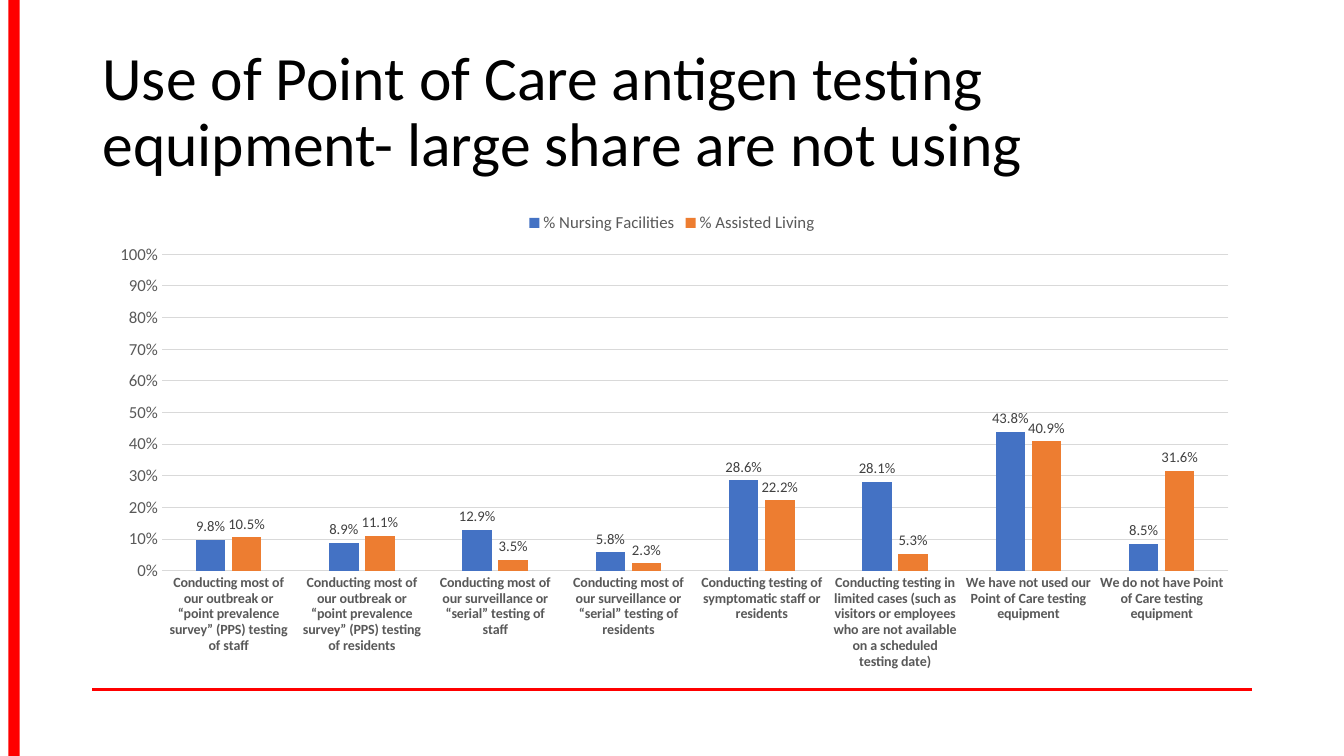
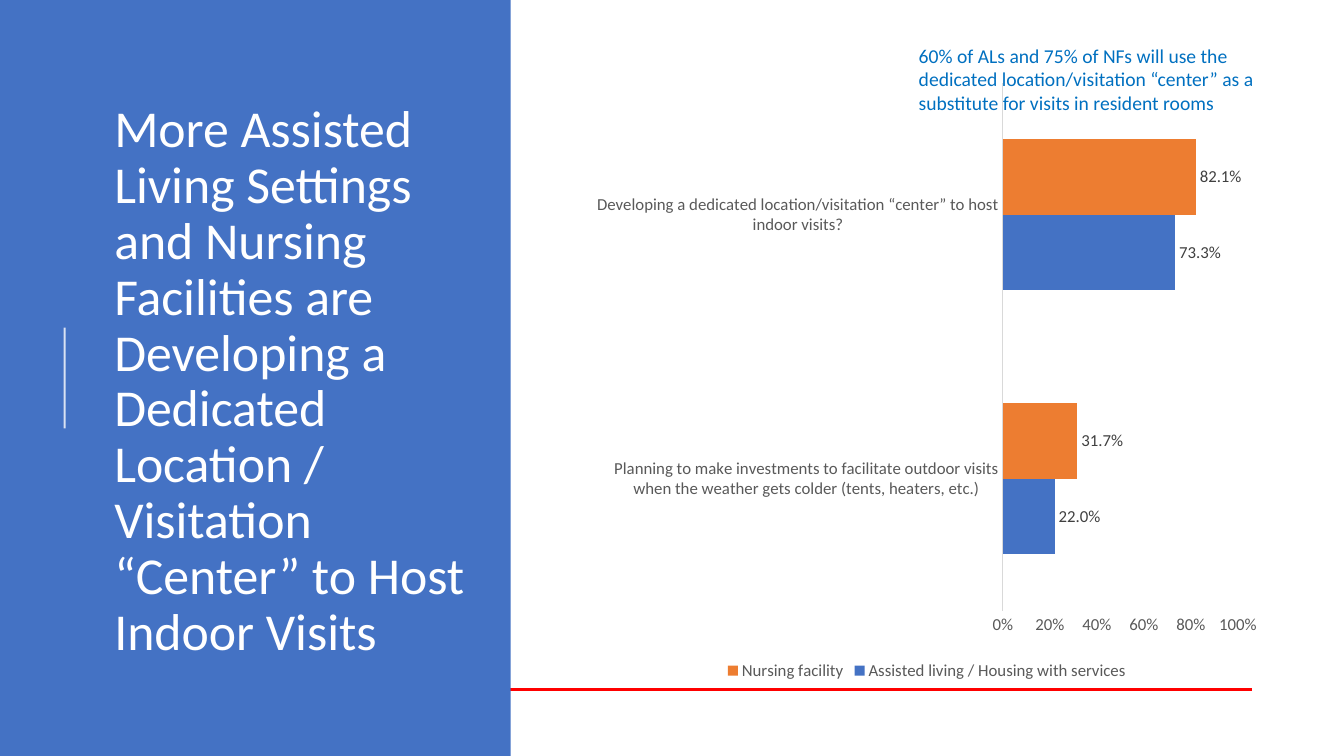
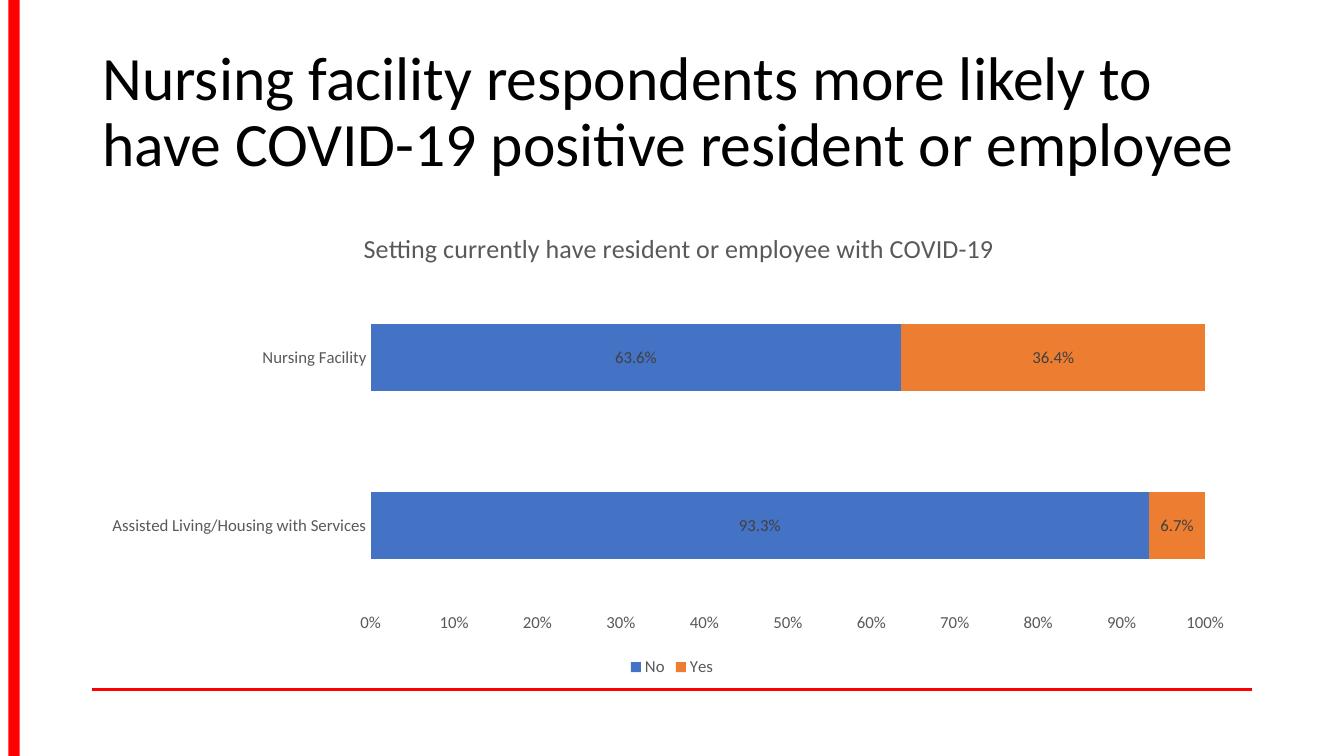
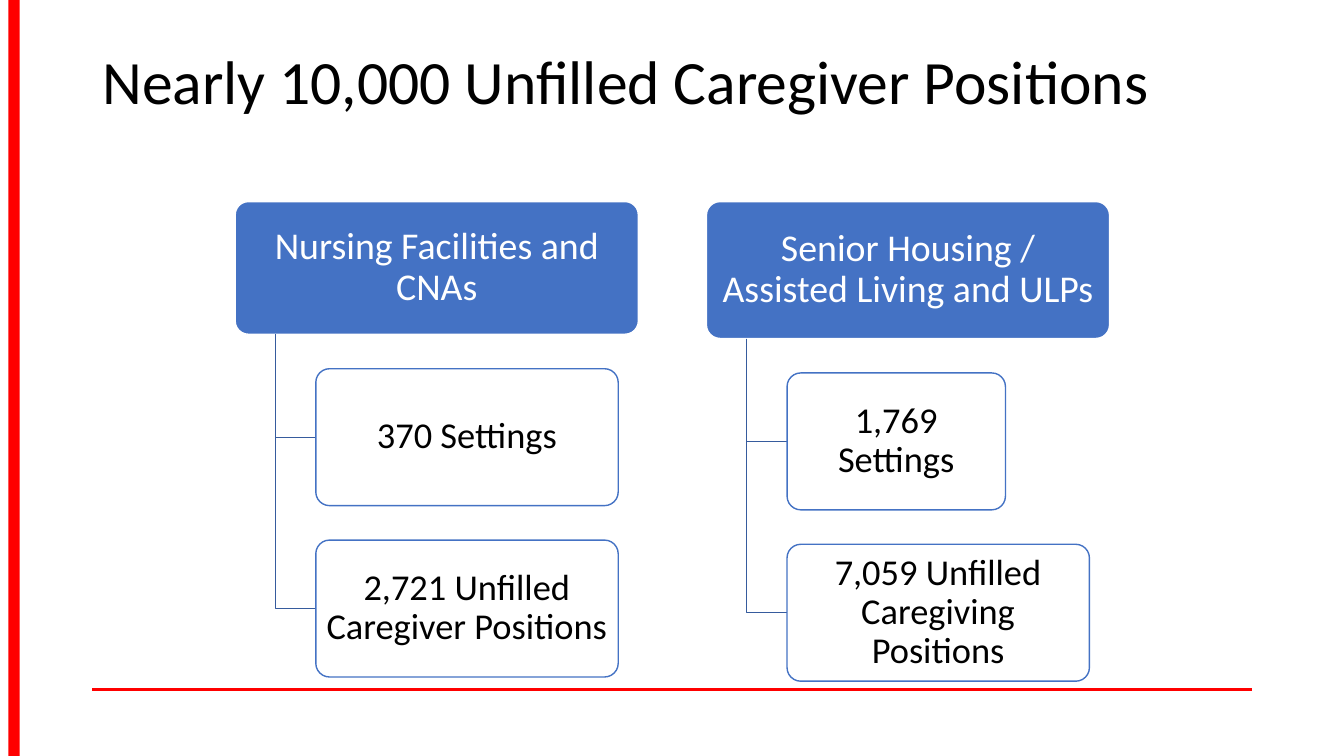
from dataclasses import dataclass
from typing import Optional

from lxml.etree import SubElement
from pptx import Presentation
from pptx.chart.data import CategoryChartData
from pptx.dml.color import RGBColor
from pptx.enum.chart import XL_CHART_TYPE as ChartKind
from pptx.enum.chart import XL_LABEL_POSITION as LabelSpot
from pptx.enum.chart import XL_LEGEND_POSITION as LegendSpot
from pptx.enum.chart import XL_TICK_MARK as TickMark
from pptx.enum.shapes import MSO_CONNECTOR as Connector
from pptx.enum.shapes import MSO_SHAPE as Preset
from pptx.enum.text import MSO_ANCHOR as Anchor
from pptx.enum.text import MSO_AUTO_SIZE as AutoSize
from pptx.enum.text import PP_ALIGN as Align
from pptx.oxml import parse_xml
from pptx.oxml.ns import nsdecls, qn
from pptx.util import Emu, Inches, Pt

COLUMNS, ROWS = 160, 90
CELL = Inches(1) / 12
FONT = "Calibri"
RED, BLUE, ORANGE, WHITE, BLACK = "FF0000", "4472C4", "ED7D31", "FFFFFF", "000000"
GREY, DARK_GREY, PALE_GREY = "595959", "404040", "D9D9D9"
NOTE_BLUE, BRANCH_BLUE = "0070C0", "365B9D"


@dataclass(frozen=True)
class Area:
    left: float
    top: float
    width: float
    height: float

    def lengths(self) -> tuple:
        return tuple(cells(n) for n in (self.left, self.top, self.width, self.height))


@dataclass(frozen=True)
class ChartPlan:
    kind: ChartKind
    area: Area
    plot: Area
    categories: list
    series: list
    legend: LegendSpot
    axis_step: float
    gap: int = 150
    overlap: int = 0
    category_size: float = 12
    category_bold: bool = False
    category_line: Optional[str] = PALE_GREY
    grid: bool = False
    label_size: float = 12
    label_spot: LabelSpot = LabelSpot.OUTSIDE_END
    title: str = ""


@dataclass(frozen=True)
class Child:
    text: str
    width: float = 36


@dataclass(frozen=True)
class Tree:
    left: float
    head: str
    head_height: float
    children: tuple


TITLE = Area(11, 4.8, 138, 17.4)
CHART = Area(11, 24, 138, 57.1)
TREE_TOP, HEAD_WIDTH, INDENT, GAP, CHILD_HEIGHT = 24, 48, 4.8, 4.1, 16.3

TESTING = ChartPlan(
    kind=ChartKind.COLUMN_CLUSTERED, area=CHART, plot=Area(0.06, 0.11, 0.92, 0.66),
    categories=[
        "Conducting most of our outbreak or “point prevalence survey” (PPS) testing of staff",
        "Conducting most of our outbreak or “point prevalence survey” (PPS) testing of residents",
        "Conducting most of our surveillance or “serial” testing of staff",
        "Conducting most of our surveillance or “serial” testing of residents",
        "Conducting testing of symptomatic staff or residents",
        "Conducting testing in limited cases (such as visitors or employees who are not available"
        " on a scheduled testing date)",
        "We have not used our Point of Care testing equipment",
        "We do not have Point of Care testing equipment",
    ],
    series=[
        ("% Nursing Facilities", (0.098, 0.089, 0.129, 0.058, 0.286, 0.281, 0.438, 0.085)),
        ("% Assisted Living", (0.105, 0.111, 0.035, 0.023, 0.222, 0.053, 0.409, 0.316)),
    ],
    legend=LegendSpot.TOP, axis_step=0.1, gap=229, overlap=-22, category_size=10,
    category_bold=True, grid=True, label_size=10.5,
)
VISITS = ChartPlan(
    kind=ChartKind.BAR_CLUSTERED, area=Area(69.2, 8.4, 82.3, 73.1),
    plot=Area(0.61, 0.02, 0.34, 0.86),
    categories=[
        "Planning to make investments to facilitate outdoor visits when the weather gets colder"
        " (tents, heaters, etc.)",
        "Developing a dedicated location/visitation “center” to host indoor visits?",
    ],
    series=[
        ("Assisted living / Housing with services", (0.22, 0.733)),
        ("Nursing facility", (0.317, 0.821)),
    ],
    legend=LegendSpot.BOTTOM, axis_step=0.2,
)
POSITIVE = ChartPlan(
    kind=ChartKind.BAR_STACKED_100, area=CHART, plot=Area(0.24, 0.15, 0.72, 0.7),
    categories=["Assisted Living/Housing with Services", "Nursing Facility"],
    series=[("No", (0.933, 0.636)), ("Yes", (0.067, 0.364))],
    legend=LegendSpot.BOTTOM, axis_step=0.1, overlap=100, category_line=None,
    label_spot=LabelSpot.CENTER,
    title="Setting currently have resident or employee with COVID-19",
)
TREES = (
    Tree(28, "Nursing Facilities and CNAs", 15.8,
         (Child("370 Settings"), Child("2,721 Unfilled Caregiver Positions"))),
    Tree(84.1, "Senior Housing / Assisted Living and ULPs", 16.3,
         (Child("1,769 Settings", 26), Child("7,059 Unfilled Caregiving Positions"))),
)


def cells(count: float) -> Emu:
    return Emu(round(count * CELL))


def rgb(color: str) -> RGBColor:
    return RGBColor.from_string(color)


def style_font(font, size: float, color: str, bold: bool = False) -> None:
    font.name = FONT
    font.size = Pt(size)
    font.bold = bold
    font.color.rgb = rgb(color)


def write(frame, text: str, *, size: float, color: str, align=None, spacing=None,
          anchor=None, insets=None) -> None:
    if anchor is not None:
        frame.vertical_anchor = anchor
    if insets is not None:
        frame.margin_left = frame.margin_right = Inches(insets[0])
        frame.margin_top = frame.margin_bottom = Inches(insets[1])
    para = frame.paragraphs[0]
    para.alignment = align
    para.line_spacing = spacing
    span = para.add_run()
    span.text = text
    style_font(span.font, size, color)


def fade(shape, percent: int) -> None:
    color = next(shape.element.iter(qn("a:srgbClr")))
    SubElement(color, qn("a:alpha")).set("val", str(percent * 1000))


def set_line(line, color: Optional[str], width: float = 0.75) -> None:
    if color is None:
        line.fill.background()
    else:
        line.color.rgb = rgb(color)
        line.width = Pt(width)


def add_block(page, preset, area: Area, fill: str, line: Optional[str] = None):
    block = page.shapes.add_shape(preset, *area.lengths())
    block.shadow.inherit = False
    block.fill.solid()
    block.fill.fore_color.rgb = rgb(fill)
    set_line(block.line, line, 1)
    return block


def add_rule(page, start: tuple, end: tuple, color: str, width: float):
    rule = page.shapes.add_connector(
        Connector.STRAIGHT, *(cells(n) for n in (*start, *end)))
    set_line(rule.line, color, width)
    SubElement(rule.element.spPr, qn("a:effectLst"))
    return rule


def add_title(page, text: str, *, area: Area = TITLE, size: float = 44,
              color: str = BLACK) -> None:
    title = page.shapes.title
    title.left, title.top, title.width, title.height = area.lengths()
    page.shapes.element.append(title.element)
    title.text_frame.word_wrap = True
    title.text_frame.auto_size = AutoSize.NONE
    write(title.text_frame, text, size=size, color=color, align=Align.LEFT,
          spacing=0.9, anchor=Anchor.MIDDLE)


def add_furniture(layout, page) -> None:
    rule = add_rule(page, (11, 82.1), (149, 82.1), RED, 2)
    band = add_block(page, Preset.RECTANGLE, Area(1, 0, 1.35, ROWS), RED)
    for number, shape in enumerate((rule, band), 101):
        next(shape.element.iter(qn("p:cNvPr"))).set("id", str(number))
        layout.shapes.element.append(shape.element)


def place(parent, index: int, **shares: float) -> None:
    for old in parent.findall(qn("c:layout")):
        parent.remove(old)
    target = '<c:layoutTarget val="inner"/>' if "w" in shares else ""
    modes = "".join(f'<c:{axis}Mode val="edge"/>' for axis in "xy")
    values = "".join(f'<c:{name} val="{share}"/>' for name, share in shares.items())
    parent.insert(index, parse_xml(
        f'<c:layout {nsdecls("c")}><c:manualLayout>{target}{modes}{values}'
        "</c:manualLayout></c:layout>"))


def style_axes(chart, plan: ChartPlan) -> None:
    category, value = chart.category_axis, chart.value_axis
    for axis in (category, value):
        axis.major_tick_mark = axis.minor_tick_mark = TickMark.NONE
        axis.has_major_gridlines = False
    style_font(category.tick_labels.font, plan.category_size, GREY, plan.category_bold)
    set_line(category.format.line, plan.category_line)
    style_font(value.tick_labels.font, 12, GREY)
    set_line(value.format.line, None)
    value.minimum_scale, value.maximum_scale = 0, 1
    value.major_unit = plan.axis_step
    value.tick_labels.number_format = "0%"
    value.tick_labels.number_format_is_linked = False
    if plan.grid:
        value.has_major_gridlines = True
        set_line(value.major_gridlines.format.line, PALE_GREY)


def style_series(series, color: str, plan: ChartPlan) -> None:
    series.format.fill.solid()
    series.format.fill.fore_color.rgb = rgb(color)
    series.invert_if_negative = False
    labels = series.data_labels
    labels.show_value = True
    labels.number_format = "0.0%"
    labels.number_format_is_linked = False
    labels.position = plan.label_spot
    style_font(labels.font, plan.label_size, DARK_GREY)


def add_chart(page, plan: ChartPlan) -> None:
    data = CategoryChartData(number_format="0.0%")
    data.categories = plan.categories
    for name, values in plan.series:
        data.add_series(name, values)
    chart = page.shapes.add_chart(plan.kind, *plan.area.lengths(), data).chart
    style_font(chart.font, 10, BLACK)
    style_axes(chart, plan)
    bars = chart.plots[0]
    bars.vary_by_categories = False
    bars.gap_width, bars.overlap = plan.gap, plan.overlap
    for series, color in zip(bars.series, (BLUE, ORANGE)):
        style_series(series, color, plan)
    chart.has_legend = True
    chart.legend.position = plan.legend
    chart.legend.include_in_layout = False
    style_font(chart.legend.font, 12, GREY)
    chart.has_title = bool(plan.title)
    if plan.title:
        write(chart.chart_title.text_frame, plan.title, size=18.6, color=GREY)
        place(chart.chart_title.element, 1, x=0.23, y=0.05)
    plot = plan.plot
    place(chart.element.find(".//" + qn("c:plotArea")), 0,
          x=plot.left, y=plot.top, w=plot.width, h=plot.height)


def add_card(page, area: Area, text: str, *, fill: str, line: str, size: float,
             color: str, side: float):
    card = add_block(page, Preset.ROUNDED_RECTANGLE, area, fill, line)
    card.adjustments[0] = 0.1
    card.text_frame.word_wrap = True
    write(card.text_frame, text, size=size, color=color, align=Align.CENTER,
          spacing=0.9, anchor=Anchor.MIDDLE, insets=(side, 0.04))
    return card


def add_branch(page, left: float, top: float, bottom: float) -> None:
    builder = page.shapes.build_freeform(cells(left), cells(top))
    builder.add_line_segments(
        [(cells(left), cells(bottom)), (cells(left + INDENT), cells(bottom))], close=False)
    branch = builder.convert_to_shape()
    branch.shadow.inherit = False
    branch.fill.background()
    set_line(branch.line, BRANCH_BLUE, 1)


def add_tree(page, tree: Tree) -> None:
    add_card(page, Area(tree.left, TREE_TOP, HEAD_WIDTH, tree.head_height), tree.head,
             fill=BLUE, line=WHITE, size=27, color=WHITE, side=0.06)
    trunk_top = TREE_TOP + tree.head_height
    for row, child in enumerate(tree.children):
        top = trunk_top + GAP + row * (CHILD_HEIGHT + GAP)
        add_branch(page, tree.left + INDENT, trunk_top, top + CHILD_HEIGHT / 2)
        area = Area(tree.left + 2 * INDENT, top, child.width, CHILD_HEIGHT)
        card = add_card(page, area, child.text, fill=WHITE, line=BLUE, size=26,
                        color=BLACK, side=0.05)
        fade(card, 90)


def build_testing(page) -> None:
    add_title(page, "Use of Point of Care antigen testing equipment- large share are not using")
    add_chart(page, TESTING)


def build_visits(page) -> None:
    add_block(page, Preset.RECTANGLE, Area(0, 0, 60.8, ROWS), BLUE)
    add_title(page, "More Assisted Living Settings and Nursing Facilities are Developing a"
              " Dedicated Location / Visitation “Center” to Host Indoor Visits",
              area=Area(12.4, 9.4, 44.3, 72.2), size=37, color=WHITE)
    fade(add_rule(page, (7.7, 51), (7.7, 39), WHITE, 1.5), 80)
    add_chart(page, VISITS)
    note = page.shapes.add_textbox(*Area(108.2, 4.6, 46.3, 9.7).lengths())
    note.text_frame.word_wrap = True
    write(note.text_frame, "60% of ALs and 75% of NFs will use the dedicated"
          " location/visitation “center” as a substitute for visits in resident rooms",
          size=14, color=NOTE_BLUE)


def build_positive(page) -> None:
    add_title(page, "Nursing facility respondents more likely to have COVID-19 positive"
              " resident or employee")
    add_chart(page, POSITIVE)


def build_positions(page) -> None:
    add_title(page, "Nearly 10,000 Unfilled Caregiver Positions",
              area=Area(TITLE.left, 1.4, TITLE.width, TITLE.height))
    for tree in TREES:
        add_tree(page, tree)


def main() -> None:
    deck = Presentation()
    deck.slide_width, deck.slide_height = cells(COLUMNS), cells(ROWS)
    layout = deck.slide_layouts.get_by_name("Title Only")
    builders = (build_testing, build_visits, build_positive, build_positions)
    pages = [deck.slides.add_slide(layout) for _ in builders]
    add_furniture(layout, pages[0])
    for build, page in zip(builders, pages):
        build(page)
    deck.save("out.pptx")


if __name__ == "__main__":
    main()
